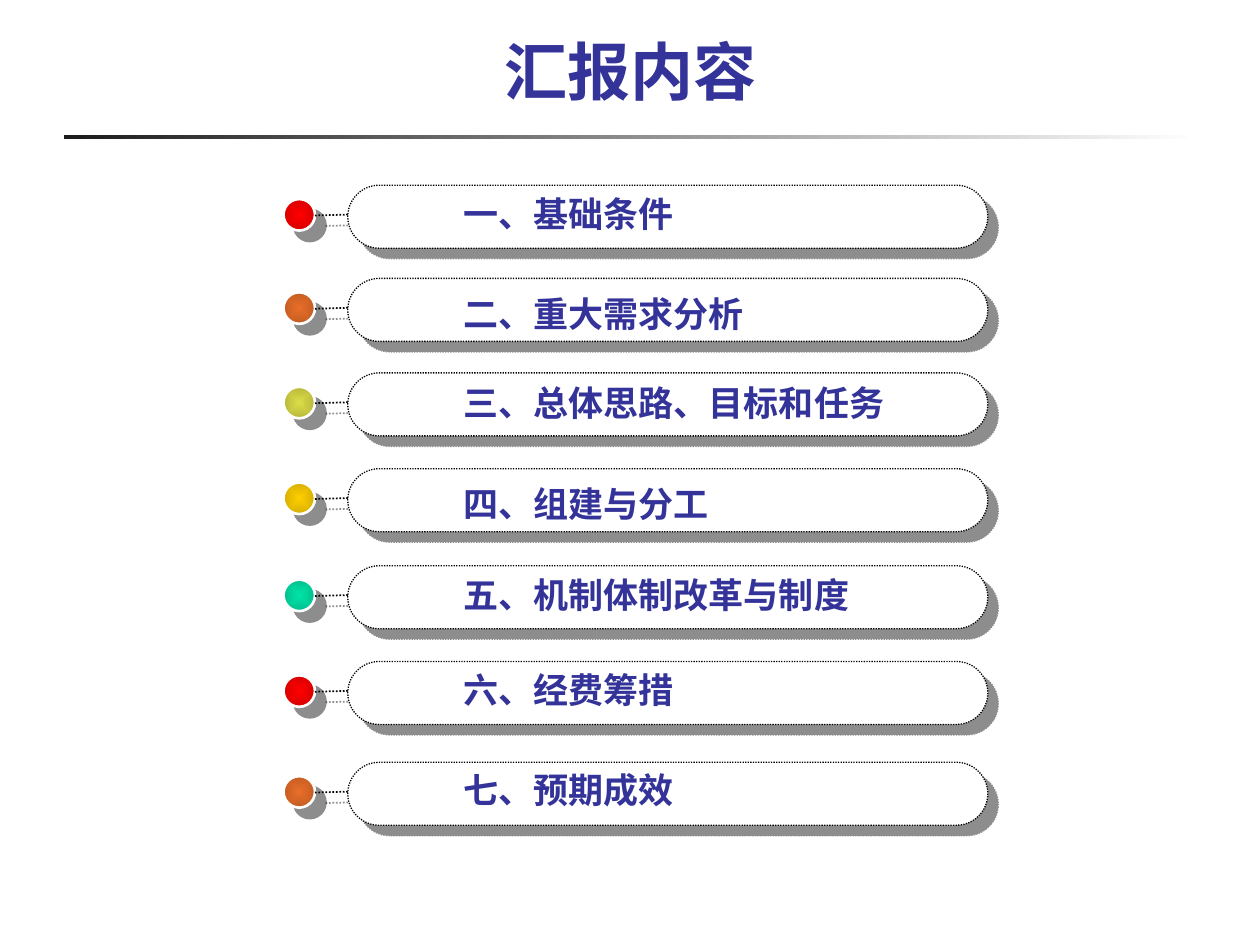
"""Build the agenda slide: a ruled title above seven numbered pills."""
from lxml import etree
from pptx import Presentation
from pptx import util as u
from pptx.dml.color import RGBColor
from pptx.enum import dml, shapes, text
from pptx.oxml import parse_xml
from pptx.oxml.ns import nsdecls, qn

COLORS = {
    "ink": "333399", "dark": "1C1C1C", "line": "000000", "white": "FFFFFF",
    "red": ("FF0000", "D60000"), "orange": ("E96E29", "C35C22"),
    "olive": ("DCDC48", "B8B83C"), "gold": ("FFCF01", "D6AE01"),
    "green": ("00E4A8", "00BF8D"),
}
ENTRIES = [
    ("一、基础条件", "red", 14.7, 14.8),
    ("二、重大需求分析", "orange", 22.1, 22.7),
    ("三、总体思路、目标和任务", "olive", 29.6, 29.8),
    ("四、组建与分工", "gold", 37.2, 37.8),
    ("五、机制体制改革与制度", "green", 44.9, 45),
    ("六、经费筹措", "red", 52.5, 52.6),
    ("七、预期成效", "orange", 60.5, 60.5),
]


def write(frame, wording, size, align, anchor, wrap):
    frame.auto_size = text.MSO_AUTO_SIZE.NONE
    frame.word_wrap = wrap
    frame.vertical_anchor = anchor
    para = frame.paragraphs[0]
    para.alignment = align
    span = para.add_run()
    span.text = wording
    span.font.name = "Arial"
    span.font.size = u.Pt(size)
    span.font.bold = True
    span.font.color.rgb = RGBColor.from_string(COLORS["ink"])


def outline_and_shadow(item, color, width, dash=None):
    item.line.color.rgb = RGBColor.from_string(COLORS[color])
    item.line.width = u.Pt(width)
    if dash:
        item.line.dash_style = dash
    item._element.spPr.append(parse_xml(
        f'<a:effectLst {nsdecls("a")}><a:outerShdw dist="{u.Pt(8.5)}" dir="2700000" '
        f'algn="ctr" rotWithShape="0"><a:srgbClr val="{COLORS["dark"]}">'
        '<a:alpha val="50000"/></a:srgbClr></a:outerShdw></a:effectLst>'))


deck = Presentation()
deck.slide_width, deck.slide_height = u.Inches(10), u.Inches(7.5)
col, row = deck.slide_width // 100, deck.slide_height // 75
page = deck.slides.add_slide(deck.slide_layouts[5])

rule = page.shapes.add_shape(
    shapes.MSO_SHAPE.RECTANGLE, int(5.1 * col), int(10.7 * row), 90 * col, int(0.3 * row))
rule.shadow.inherit = False
rule.line.fill.background()
rule.fill.gradient()
rule.fill.gradient_angle = 0
for stop, color in zip(rule.fill.gradient_stops, ("dark", "white")):
    stop.color.rgb = RGBColor.from_string(COLORS[color])

title = page.shapes.title
title.left, title.top = 0, int(2.3 * row)
title.width, title.height = deck.slide_width, int(6.8 * row)
write(title.text_frame, "汇报内容", 36, text.PP_ALIGN.CENTER, text.MSO_ANCHOR.BOTTOM, True)

dots = dml.MSO_LINE.ROUND_DOT
for wording, color, pill_row, text_row in ENTRIES:
    group = page.shapes.add_group_shape()

    dot = group.shapes.add_shape(
        shapes.MSO_SHAPE.OVAL, int(22.5 * col), int((pill_row + 1.1) * row),
        int(2.5 * col), int(2.5 * row))
    dot.fill.gradient()
    for stop, shade in zip(dot.fill.gradient_stops, COLORS[color]):
        stop.color.rgb = RGBColor.from_string(shade)
    gradient = dot._element.spPr.find(qn("a:gradFill"))
    gradient.remove(gradient.find(qn("a:lin")))
    focus = etree.SubElement(gradient, qn("a:path"), path="shape")
    etree.SubElement(focus, qn("a:fillToRect"), l="50000", t="50000", r="50000", b="50000")
    outline_and_shadow(dot, "white", 1.5)

    link = group.shapes.add_connector(
        shapes.MSO_CONNECTOR.STRAIGHT, 25 * col, int((pill_row + 2.4) * row),
        int(28.8 * col), int((pill_row + 2.3) * row))
    outline_and_shadow(link, "line", 1, dots)

    pill = group.shapes.add_shape(
        shapes.MSO_SHAPE.ROUNDED_RECTANGLE, int(27.6 * col), int(pill_row * row),
        int(50.8 * col), 5 * row)
    pill.adjustments[0] = 0.5
    pill.fill.solid()
    pill.fill.fore_color.rgb = RGBColor.from_string(COLORS["white"])
    outline_and_shadow(pill, "line", 0.75, dots)

    box = page.shapes.add_textbox(
        int(35.8 * col), int(text_row * row),
        int((2 + 2.82 * len(wording)) * col), int(4.4 * row))
    write(box.text_frame, wording, 20, text.PP_ALIGN.LEFT, text.MSO_ANCHOR.TOP, False)

deck.save("out.pptx")
